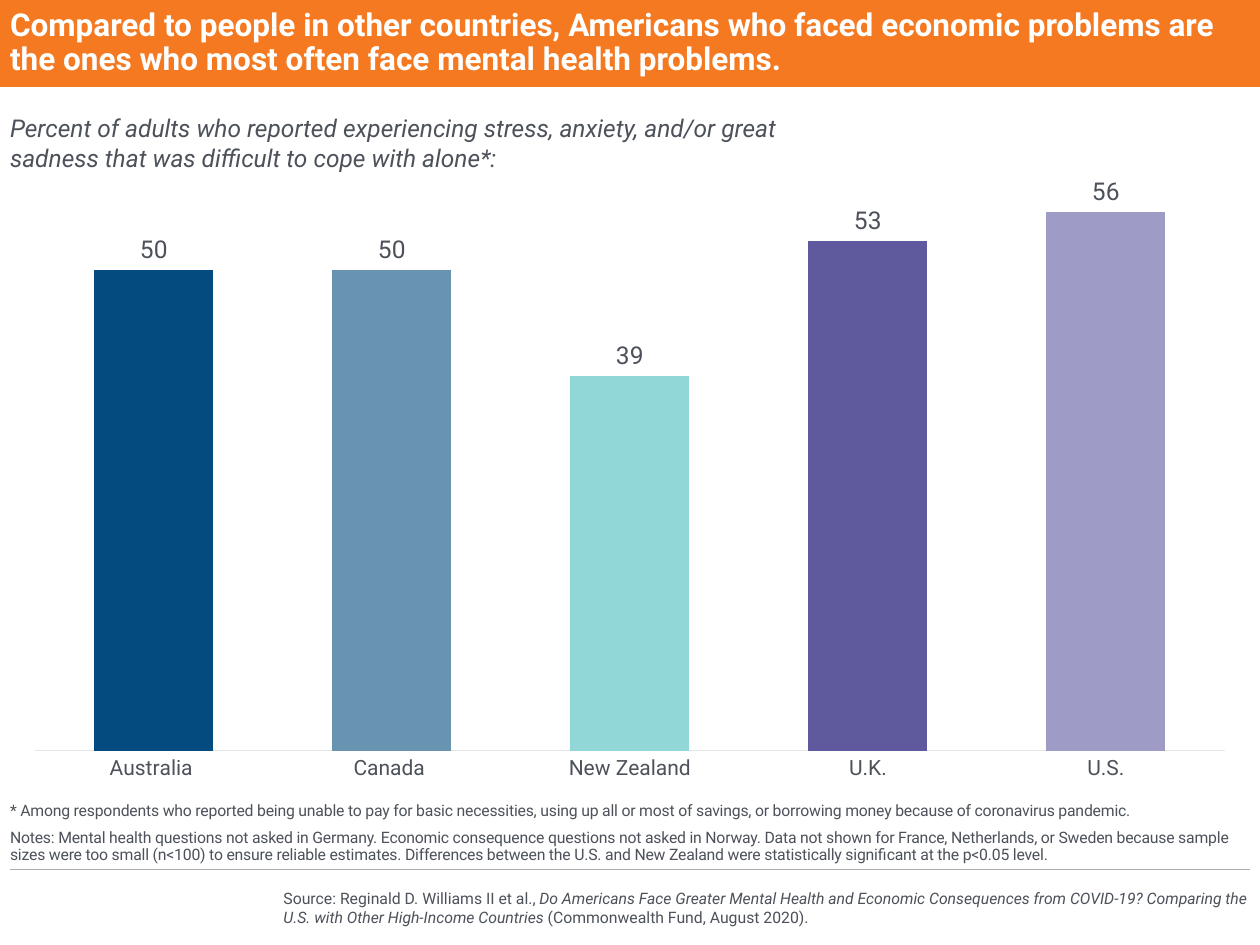
from lxml import etree
from pptx import Presentation
from pptx.chart.data import CategoryChartData
from pptx.dml.color import RGBColor
from pptx.enum.chart import XL_CHART_TYPE, XL_LABEL_POSITION, XL_TICK_MARK
from pptx.enum.shapes import MSO_CONNECTOR, MSO_SHAPE
from pptx.enum.text import MSO_ANCHOR
from pptx.oxml import parse_xml
from pptx.oxml.ns import nsdecls, qn
from pptx.util import Inches, Pt

COLORS = {
    "banner": "F47920", "text": "4C515A", "white": "FFFFFF",
    "rule": "ABABAB", "axis": "E3E5E7",
}
BARS = [  # country, percent, colour
    ("Australia ", 50, "044C7F"),
    ("Canada ", 50, "6894B2"),
    ("New Zealand", 39, "92D7D7"),
    ("U.K.", 53, "5F5A9D"),
    ("U.S.", 56, "9E9BC6"),
]
LEFT, WIDTH = 0.08, 9.84


def style_font(font, size, color="text", bold=None, italic=None):
    font.name = "Roboto"
    font.size = Pt(size)
    font.color.rgb = RGBColor.from_string(COLORS[color])
    font.bold = bold
    font.italic = italic


def add_text(box, paragraphs, size, anchor=MSO_ANCHOR.TOP, spacing=None, after=None, **style):
    """Each paragraph is a list of (text, italic) runs; italic None inherits."""
    frame = slide.shapes.add_textbox(*[Inches(v) for v in box]).text_frame
    frame.word_wrap = True
    frame.vertical_anchor = anchor
    frame.margin_left = frame.margin_right = frame.margin_top = frame.margin_bottom = 0
    for i, runs in enumerate(paragraphs):
        paragraph = frame.add_paragraph() if i else frame.paragraphs[0]
        paragraph.line_spacing = spacing
        paragraph.space_after = after
        style_font(paragraph.font, size, **style)
        for text, italic in runs:
            run = paragraph.add_run()
            run.text = text
            if italic is not None:
                run.font.italic = italic
    return frame


prs = Presentation()
prs.slide_width, prs.slide_height = Inches(10), Inches(7.5)
slide = prs.slides.add_slide(prs.slide_layouts[6])

# Footer rule
footer_rule = slide.shapes.add_connector(
    MSO_CONNECTOR.STRAIGHT, Inches(LEFT), Inches(6.9), Inches(LEFT + WIDTH), Inches(6.9))
footer_rule.line.color.rgb = RGBColor.from_string(COLORS["rule"])
footer_rule.line.width = Pt(0.75)
etree.SubElement(footer_rule._element.spPr, qn("a:effectLst"))

# Title banner
banner = slide.shapes.add_shape(MSO_SHAPE.RECTANGLE, 0, 0, Inches(10), Inches(0.69))
banner.shadow.inherit = False
banner.fill.solid()
banner.fill.fore_color.rgb = RGBColor.from_string(COLORS["banner"])
banner.line.fill.background()
add_text((LEFT, 0, WIDTH, 0.69), [[(
    "Compared to people in other countries, Americans who faced economic problems are "
    "the ones who most often face mental health problems.", None)]],
    18, MSO_ANCHOR.MIDDLE, spacing=0.9, color="white", bold=True)

# Chart of percentages by country
chart_data = CategoryChartData()
chart_data.categories = [country for country, _, _ in BARS]
chart_data.add_series("Series 1", [percent for _, percent, _ in BARS])
chart = slide.shapes.add_chart(
    XL_CHART_TYPE.COLUMN_CLUSTERED, Inches(LEFT), Inches(1.28),
    Inches(WIDTH), Inches(5.03), chart_data).chart
chart.has_legend = False
chart.has_title = False
style_font(chart.font, 14)

country_axis = chart.category_axis
country_axis.major_tick_mark = XL_TICK_MARK.NONE
country_axis.format.line.color.rgb = RGBColor.from_string(COLORS["axis"])
country_axis.format.line.width = Pt(0.75)
style_font(country_axis.tick_labels.font, 12)
percent_axis = chart.value_axis
percent_axis.visible = False
percent_axis.has_major_gridlines = False
percent_axis.minimum_scale, percent_axis.maximum_scale = 0, 60

plot = chart.plots[0]
plot.gap_width = 100
plot.vary_by_categories = False
plot.has_data_labels = True
labels = plot.data_labels
labels.show_value = True
labels.position = XL_LABEL_POSITION.OUTSIDE_END
style_font(labels.font, 14)
for i, (_, _, color) in enumerate(BARS):
    fill = plot.series[0].points[i].format.fill
    fill.solid()
    fill.fore_color.rgb = RGBColor.from_string(color)

# Fixed plot area inside the chart frame
plot_area = chart._chartSpace.chart.plotArea
for old_layout in plot_area.findall(qn("c:layout")):
    plot_area.remove(old_layout)
plot_area.insert(0, parse_xml(
    f'<c:layout {nsdecls("c")}><c:manualLayout><c:layoutTarget val="inner"/>'
    '<c:xMode val="edge"/><c:yMode val="edge"/><c:x val="0.02"/><c:y val="0.02"/>'
    '<c:w val="0.96"/><c:h val="0.91"/></c:manualLayout></c:layout>'))

# Chart heading
add_text((LEFT, 0.9, 6.54, 0.47), [[(
    "Percent of adults who reported experiencing stress, anxiety, and/or great "
    "sadness that was difficult to cope with alone*:", None)]], 14, italic=True)

# Notes, slightly condensed
notes = add_text((LEFT, 6.32, WIDTH, 0.54), [
    [("* Among respondents who reported being unable to pay for basic necessities, using up "
      "all or most of savings, or borrowing money because of coronavirus pandemic.", None)],
    [("Notes: Mental health questions not asked in Germany. Economic consequence questions "
      "not asked in Norway. Data not shown for France, Netherlands, or Sweden because sample "
      "sizes were too small (n<100) to ensure reliable estimates. Differences between the U.S. "
      "and New Zealand were statistically significant at the p<0.05 level.", None)],
], 9, MSO_ANCHOR.BOTTOM, spacing=0.9, after=Pt(6))
for paragraph in notes.paragraphs:
    paragraph.runs[0]._r.get_or_add_rPr().set("spc", "-10")

# Source
add_text((2.25, 7.05, 7.67, 0.3), [[
    ("Source: Reginald D. Williams II et al., ", None),
    ("Do Americans Face Greater Mental Health and Economic Consequences from COVID-19? "
     "Comparing the U.S. with Other High-Income Countries ", True),
    ("(Commonwealth Fund, August 2020).", None),
]], 9, MSO_ANCHOR.MIDDLE)

prs.save("out.pptx")
